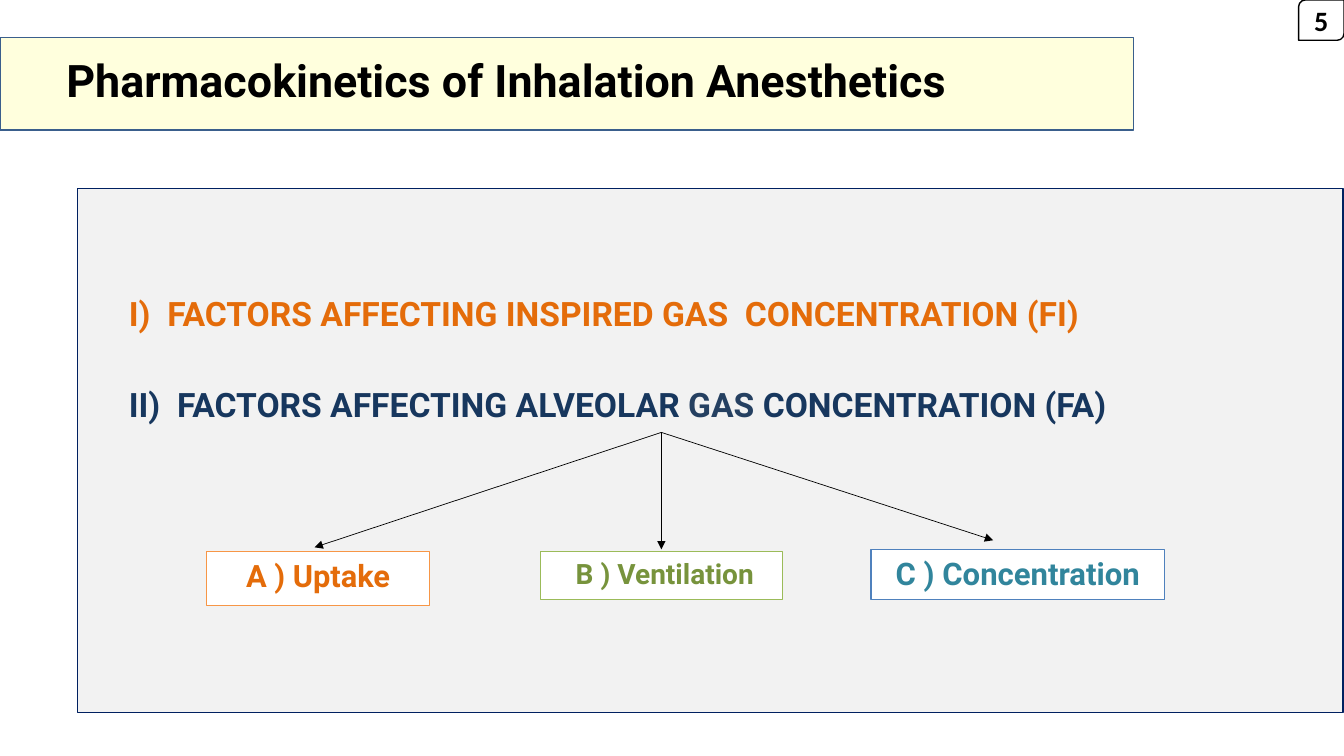
from dataclasses import dataclass

from lxml import etree
from pptx import Presentation
from pptx import util as u
from pptx.dml.color import RGBColor
from pptx.enum import shapes, text
from pptx.oxml import ns


@dataclass(frozen=True)
class Theme:
    font: str = "Roboto"
    number_font: str = "Calibri"
    black: str = "000000"
    white: str = "FFFFFF"
    banner: str = "FFFFDD"
    banner_line: str = "3A5F8C"
    panel: str = "F2F2F2"
    panel_line: str = "002060"
    inspired: str = "E46C0A"
    alveolar: str = "17375E"
    gas: str = "254061"
    title_size: float = 32
    heading_size: float = 24
    number_size: float = 20
    line_width: float = 1
    arrow_width: float = 0.5


THEME = Theme()

# label, left, top, width, height within the panel, type size, text colour, line colour
FACTORS = [
    (" A ) Uptake ", 1.28, 3.6, 2.21, 0.54, 22, "E46C0A", "F79646"),
    (" B ) Ventilation", 4.59, 3.6, 2.4, 0.48, 20, "77933C", "9BBB59"),
    ("C ) Concentration", 7.87, 3.58, 2.91, 0.5, 22.2, "31859C", "4F81BD"),
]
ARROW_START = (5.79, 2.42)
ARROW_TIPS = [(2.35, 3.56), (5.79, 3.58), (9.08, 3.49)]


def inches(*lengths):
    return [u.Inches(length) for length in lengths]


def add_box(page, box, fill, line, kind=shapes.MSO_SHAPE.RECTANGLE):
    shape = page.shapes.add_shape(kind, *inches(*box))
    shape.shadow.inherit = False
    shape.fill.solid()
    shape.fill.fore_color.rgb = RGBColor.from_string(fill)
    shape.line.color.rgb = RGBColor.from_string(line)
    shape.line.width = u.Pt(THEME.line_width)
    return shape


def write(shape, spans, size, font=THEME.font, anchor=text.MSO_ANCHOR.TOP,
          align=text.PP_ALIGN.LEFT, spacing=1.0):
    """Fill a shape with one bold paragraph of (wording, colour) spans."""
    frame = shape.text_frame
    frame.word_wrap = True
    frame.vertical_anchor = anchor
    para = frame.paragraphs[0]
    para.alignment = align
    para.line_spacing = spacing
    for wording, colour in spans:
        span = para.add_run()
        span.text = wording
        for name, value in {"name": font, "size": u.Pt(size), "bold": True}.items():
            setattr(span.font, name, value)
        span.font.color.rgb = RGBColor.from_string(colour)


def add_arrow(page, start, tip):
    arrow = page.shapes.add_connector(shapes.MSO_CONNECTOR.STRAIGHT, *inches(*start, *tip))
    arrow.line.color.rgb = RGBColor.from_string(THEME.black)
    arrow.line.width = u.Pt(THEME.arrow_width)
    etree.SubElement(arrow.line._get_or_add_ln(), ns.qn("a:tailEnd"), type="triangle")
    etree.SubElement(arrow._element.spPr, ns.qn("a:effectLst"))


def add_banner(page, box):
    left, top, width, height = box
    add_box(page, box, THEME.banner, THEME.banner_line)
    title = page.shapes.add_textbox(*inches(left + 0.56, top + 0.06, 11.5, 0.78))
    write(title, [("Pharmacokinetics of Inhalation Anesthetics", THEME.black)],
          THEME.title_size, anchor=text.MSO_ANCHOR.MIDDLE, spacing=0.9)


def add_page_number(page, box):
    badge = add_box(page, box, THEME.white, THEME.black,
                    shapes.MSO_SHAPE.ROUND_2_DIAG_RECTANGLE)
    write(badge, [("5", THEME.black)], THEME.number_size, THEME.number_font,
          text.MSO_ANCHOR.MIDDLE, text.PP_ALIGN.CENTER)


def add_factor_panel(page, box):
    left, top, width, height = box
    add_box(page, box, THEME.panel, THEME.panel_line)

    inspired = page.shapes.add_textbox(*inches(left + 0.41, top + 0.99, 11.45, 0.6))
    write(inspired, [("I)  FACTORS AFFECTING INSPIRED GAS  CONCENTRATION (FI)",
                      THEME.inspired)], THEME.heading_size)
    alveolar = page.shapes.add_textbox(*inches(left + 0.41, top + 1.93, 11.35, 0.6))
    write(alveolar, [("II)  FACTORS AFFECTING ALVEOLAR ", THEME.alveolar),
                     ("GAS ", THEME.gas),
                     ("CONCENTRATION (FA)", THEME.alveolar)],
          THEME.heading_size, spacing=0.9)

    start = (left + ARROW_START[0], top + ARROW_START[1])
    for across, down in ARROW_TIPS:
        add_arrow(page, start, (left + across, top + down))

    for label, across, down, wide, high, size, colour, line in FACTORS:
        factor = add_box(page, (left + across, top + down, wide, high), THEME.white, line)
        write(factor, [(label, colour)], size, align=text.PP_ALIGN.CENTER)


def main():
    deck = Presentation()
    deck.slide_width, deck.slide_height = inches(13.33, 7.5)
    page = deck.slides.add_slide(deck.slide_layouts[6])
    add_factor_panel(page, (0.77, 1.87, 12.55, 5.2))
    add_banner(page, (0, 0.37, 11.24, 0.92))
    add_page_number(page, (12.88, 0, 0.45, 0.4))
    deck.save("out.pptx")


if __name__ == "__main__":
    main()
